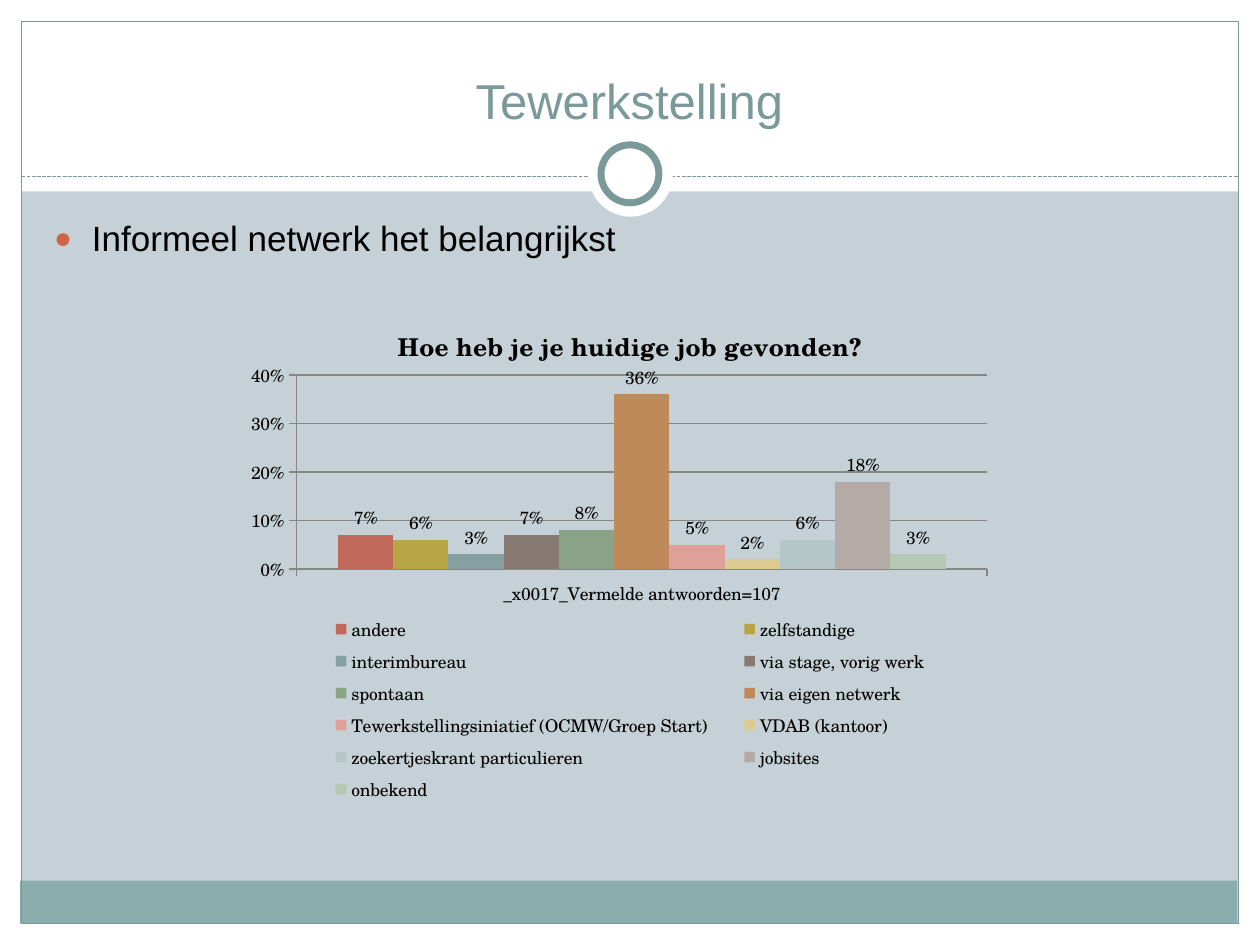
"""Build the employment slide with its column chart of how jobs were found."""
from lxml.etree import SubElement
from pptx import Presentation
from pptx.chart.data import CategoryChartData
from pptx.dml.color import RGBColor
from pptx.enum.chart import XL_CHART_TYPE, XL_LABEL_POSITION, XL_LEGEND_POSITION, XL_TICK_MARK
from pptx.enum.dml import MSO_LINE
from pptx.enum.shapes import MSO_CONNECTOR, MSO_SHAPE
from pptx.enum.text import MSO_ANCHOR, MSO_AUTO_SIZE, PP_ALIGN
from pptx.oxml.ns import qn
from pptx.util import Inches, Pt

HEADING = "Tewerkstelling"
POINT = "Informeel netwerk het belangrijkst"
QUESTION = "Hoe heb je je huidige job gevonden?"
RESPONSES = "_x0017_Vermelde antwoorden=107"
CHANNELS = [
    ("andere", 0.07, "C0695A"),
    ("zelfstandige", 0.06, "B8A545"),
    ("interimbureau", 0.03, "86A0A1"),
    ("via stage, vorig werk", 0.07, "877A72"),
    ("spontaan", 0.08, "8AA286"),
    ("via eigen netwerk", 0.36, "BE8A59"),
    ("Tewerkstellingsiniatief (OCMW/Groep Start)", 0.05, "E0A09A"),
    ("VDAB (kantoor)", 0.02, "DBCB90"),
    ("zoekertjeskrant particulieren", 0.06, "B4C6C7"),
    ("jobsites", 0.18, "B5ABA6"),
    ("onbekend", 0.03, "B4C8B2"),
]
WHITE, BLACK, TEAL, GREY = "FFFFFF", "000000", "7C999A", "868686"
PANELS = [
    (MSO_SHAPE.RECTANGLE, (0, 7.33, 10, 0.17), WHITE, 0),
    (MSO_SHAPE.RECTANGLE, (0, 0, 10, 1.52), WHITE, 0),
    (MSO_SHAPE.RECTANGLE, (0, 0, 0.17, 7.5), WHITE, 0),
    (MSO_SHAPE.RECTANGLE, (9.83, 0, 0.17, 7.5), WHITE, 0),
    (MSO_SHAPE.RECTANGLE, (0.16, 6.99, 9.66, 0.34), "8CADAE", 0),
    (MSO_SHAPE.RECTANGLE, (0.17, 0.17, 9.66, 7.16), None, 0.75),
]
RINGS = [
    (MSO_SHAPE.OVAL, (4.67, 1.05, 0.67, 0.67), WHITE, 0),
    (MSO_SHAPE.OVAL, (4.77, 1.15, 0.46, 0.46), WHITE, 4),
]


def paint(color_format, color):
    color_format.rgb = RGBColor.from_string(color)


def fill(target, color):
    target.fill.solid()
    paint(target.fill.fore_color, color)


def stroke(line, color, width=0.75):
    paint(line.color, color)
    line.width = Pt(width)


def style(font, size, face="TeX Gyre Schola", color=BLACK, bold=False):
    font.size, font.name, font.bold = Pt(size), face, bold
    paint(font.color, color)


def write(frame, text, align=None, **font_format):
    paragraph = frame.paragraphs[0]
    run = paragraph.add_run()
    run.text = text
    style(run.font, **font_format)
    paragraph.alignment = align
    return paragraph


def decorate(slide, parts):
    for kind, box, color, width in parts:
        part = slide.shapes.add_shape(kind, *map(Inches, box))
        part.shadow.inherit = False
        if color:
            fill(part, color)
        else:
            part.fill.background()
        if width:
            stroke(part.line, TEAL, width)
        else:
            part.line.fill.background()


def place(slide, placeholder, box, anchor):
    placeholder.left, placeholder.top, placeholder.width, placeholder.height = map(Inches, box)
    frame = placeholder.text_frame
    frame.word_wrap, frame.auto_size, frame.vertical_anchor = True, MSO_AUTO_SIZE.NONE, anchor
    slide.shapes._spTree.append(placeholder._element)
    return frame


def add_bullet(paragraph):
    props = paragraph._p.get_or_add_pPr()
    props.set("marL", str(Inches(0.3)))
    props.set("indent", str(-Inches(0.3)))
    SubElement(SubElement(props, qn("a:buClr")), qn("a:srgbClr"), val="D16349")
    SubElement(props, qn("a:buSzPct"), val="85000")
    SubElement(props, qn("a:buFont"), typeface="Arial")
    SubElement(props, qn("a:buChar"), char="●")


def set_layout(element, after, box, inner=False):
    for old in element.findall(qn("c:layout")):
        element.remove(old)
    layout = SubElement(element, qn("c:layout"))
    manual = SubElement(layout, qn("c:manualLayout"))
    if inner:
        SubElement(manual, qn("c:layoutTarget"), val="inner")
    for tag in ("xMode", "yMode"):
        SubElement(manual, qn(f"c:{tag}"), val="edge")
    for tag, value in zip("xywh", box):
        SubElement(manual, qn(f"c:{tag}"), val=str(value))
    element.insert(0 if after is None else element.index(after) + 1, layout)


def add_channels(slide):
    data = CategoryChartData(number_format="0%")
    data.categories = [RESPONSES]
    for name, share, _ in CHANNELS:
        data.add_series(name, [share])
    chart = slide.shapes.add_chart(
        XL_CHART_TYPE.COLUMN_CLUSTERED, *map(Inches, (1.85, 2.41, 6.3, 4.05)), data).chart
    style(chart.font, 10)
    write(chart.chart_title.text_frame, QUESTION, size=14, bold=True)
    chart.chart_title.include_in_layout = False

    plot = chart.plots[0]
    plot.gap_width, plot.overlap, plot.vary_by_categories = 150, 0, False
    for series, (_, _, color) in zip(plot.series, CHANNELS):
        fill(series.format, color)
        series.invert_if_negative = False
        labels = series.data_labels
        labels.show_value, labels.position = True, XL_LABEL_POSITION.OUTSIDE_END
        labels.number_format, labels.number_format_is_linked = "0%", False
        style(labels.font, 10)

    shares = chart.value_axis
    shares.minimum_scale, shares.maximum_scale, shares.major_unit = 0, 0.4, 0.1
    shares.has_major_gridlines = True
    stroke(shares.major_gridlines.format.line, GREY)
    shares.tick_labels.number_format = "0%"
    shares.tick_labels.number_format_is_linked = False
    for axis in (shares, chart.category_axis):
        axis.major_tick_mark, axis.minor_tick_mark = XL_TICK_MARK.OUTSIDE, XL_TICK_MARK.NONE
        stroke(axis.format.line, GREY)
        style(axis.tick_labels.font, 10)

    chart.has_legend = True
    legend = chart.legend
    legend.position, legend.include_in_layout = XL_LEGEND_POSITION.BOTTOM, False
    style(legend.font, 10)
    set_layout(legend._element, legend._element.find(qn("c:legendPos")), (0.09, 0.6, 0.82, 0.39))
    set_layout(chart._chartSpace.chart.plotArea, None, (0.08, 0.14, 0.87, 0.38), inner=True)


def main():
    deck = Presentation()
    deck.slide_width, deck.slide_height = Inches(10), Inches(7.5)
    slide = deck.slides.add_slide(deck.slide_layouts[1])
    fill(slide.background, "C5D1D7")

    decorate(slide, PANELS)
    divider = slide.shapes.add_connector(
        MSO_CONNECTOR.STRAIGHT, *map(Inches, (0.17, 1.4, 9.83, 1.4)))
    stroke(divider.line, TEAL)
    divider.line.dash_style = MSO_LINE.SQUARE_DOT
    SubElement(divider._element.spPr, qn("a:effectLst"))
    # The white halo hides the divider behind the ring.
    decorate(slide, RINGS)

    heading = place(slide, slide.shapes.title, (0.33, 0.25, 9.33, 0.83), MSO_ANCHOR.BOTTOM)
    write(heading, HEADING, PP_ALIGN.CENTER, size=28, face="Arial", color=TEAL)
    body = place(slide, slide.placeholders[1], (0.33, 1.67, 9.3, 5), MSO_ANCHOR.TOP)
    add_bullet(write(body, POINT, size=20, face="Arial"))
    add_channels(slide)
    deck.save("out.pptx")


if __name__ == "__main__":
    main()
